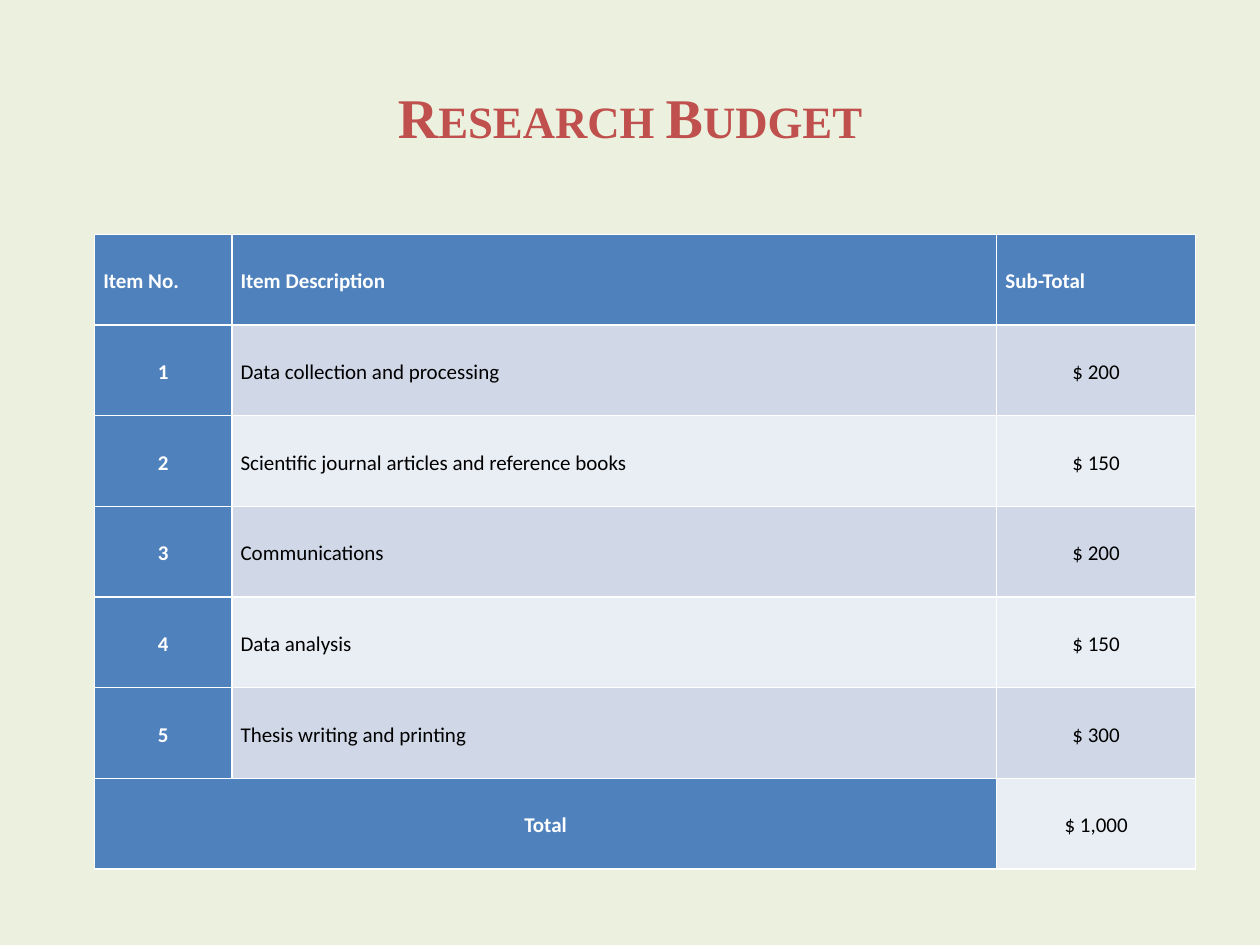
import pptx
import pptx.util
import pptx.dml.color
import pptx.enum.text
from pptx.util import Inches, Pt

TITLE = "Research Budget"
HEAD = ("Item No.", "Item Description", "Sub-Total")
ITEMS = [
    ("1", "Data collection and processing", "$ 200"),
    ("2", "Scientific journal articles and reference books", "$ 150"),
    ("3", "Communications", "$ 200"),
    ("4", "Data analysis", "$ 150"),
    ("5", "Thesis writing and printing", "$ 300"),
]
TOTAL = ("Total", "", "$ 1,000")
WIDTHS = (1.09, 6.07, 1.58)
ROW_H = 0.72
BLUE, WHITE, BLACK = "4F81BD", "FFFFFF", "000000"
BANDS = ("E9EDF4", "D0D8E8")
ALIGN = pptx.enum.text.PP_ALIGN
MIDDLE = pptx.enum.text.MSO_ANCHOR.MIDDLE


def paint(target, color):
    """Set a solid fill or a font to a hex colour."""
    if hasattr(target, "solid"):
        target.solid()
        target = target.fore_color
    else:
        target = target.color
    target.rgb = pptx.dml.color.RGBColor.from_string(color)


def style(par, face, size, color, bold, align):
    par.font.name, par.font.size, par.font.bold = face, Pt(size), bold
    paint(par.font, color)
    par.alignment = align


def add_title(slide):
    title = slide.shapes.title
    title.left, title.top = Inches(0.5), Inches(0.3)
    title.width, title.height = Inches(9), Inches(1.25)
    frame = title.text_frame
    frame.text = TITLE
    frame.vertical_anchor = MIDDLE
    par = frame.paragraphs[0]
    style(par, "Times New Roman", 32, "C0504D", True, ALIGN.CENTER)
    par.runs[0].font._element.set("cap", "small")


def add_budget(slide):
    rows = [HEAD, *ITEMS, TOTAL]
    table = slide.shapes.add_table(
        len(rows), len(HEAD), Inches(0.75), Inches(1.86),
        Inches(sum(WIDTHS)), Inches(ROW_H * len(rows))).table
    table.first_col = True
    for col, width in zip(table.columns, WIDTHS):
        col.width = Inches(width)
    last = len(rows) - 1
    table.cell(last, 0).merge(table.cell(last, 1))
    for r, row in enumerate(rows):
        table.rows[r].height = Inches(ROW_H)
        for c, text in enumerate(row):
            cell = table.cell(r, c)
            strong = r == 0 or c == 0
            paint(cell.fill, BLUE if strong else BANDS[r % 2])
            cell.vertical_anchor = MIDDLE
            cell.margin_left = cell.margin_right = Inches(0.07)
            cell.margin_top = cell.margin_bottom = 0
            if cell.is_spanned:
                continue
            cell.text = text
            par = cell.text_frame.paragraphs[0]
            par.line_spacing = 1.15
            style(par, "Calibri", 12, WHITE if strong else BLACK, strong,
                  ALIGN.LEFT if r == 0 or c == 1 else ALIGN.CENTER)


def main():
    deck = pptx.Presentation()
    deck.slide_width, deck.slide_height = Inches(10), Inches(7.5)
    slide = deck.slides.add_slide(deck.slide_layouts[5])
    paint(slide.background.fill, "EBF1DE")
    add_title(slide)
    add_budget(slide)
    deck.save("out.pptx")


if __name__ == "__main__":
    main()
